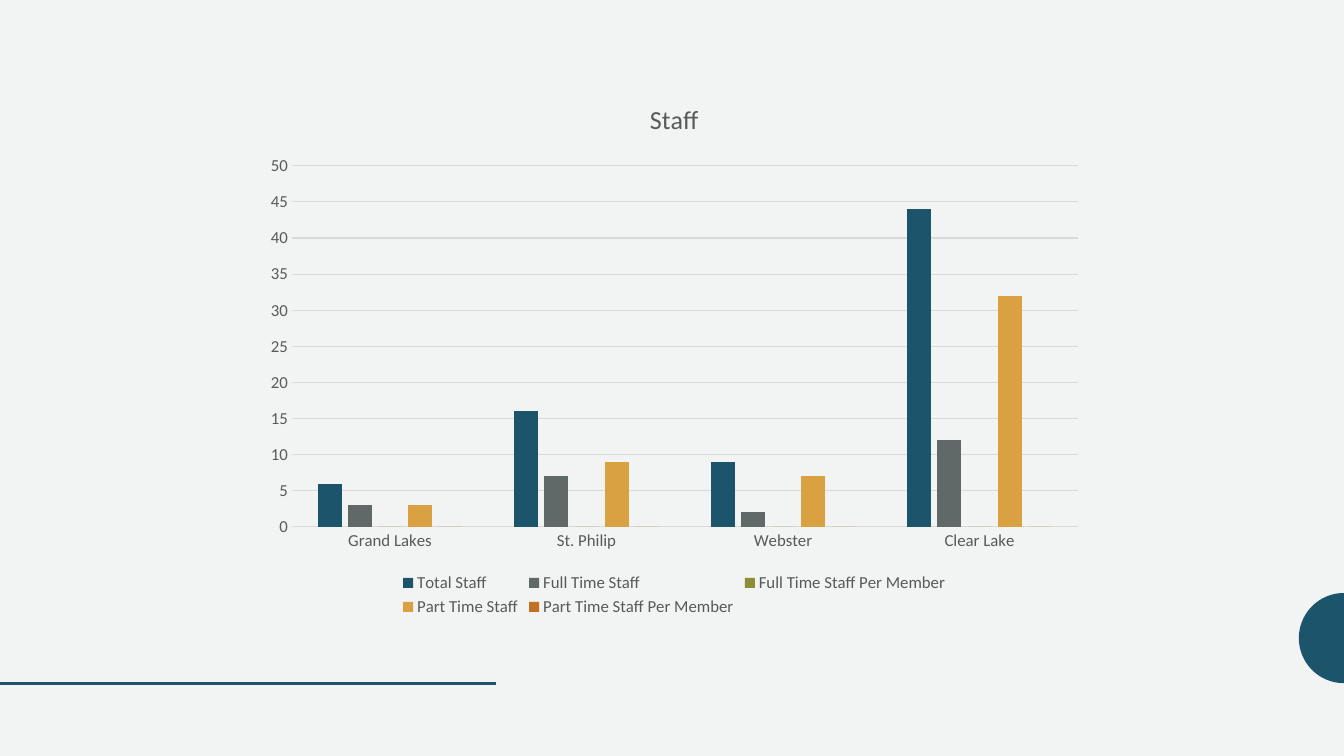
from math import cos, pi, sin

from lxml.etree import SubElement
from pptx import Presentation
from pptx.chart.data import CategoryChartData
from pptx.dml.color import RGBColor
from pptx.enum.chart import XL_CHART_TYPE, XL_LEGEND_POSITION, XL_TICK_MARK
from pptx.enum.shapes import MSO_CONNECTOR
from pptx.oxml.ns import qn
from pptx.util import Pt

BACKGROUND = RGBColor(0xF2, 0xF3, 0xF3)
TEAL = RGBColor(0x1C, 0x54, 0x6B)
GRAY = RGBColor(0x60, 0x69, 0x68)
OLIVE = RGBColor(0x8D, 0x8D, 0x35)
GOLD = RGBColor(0xD9, 0xA1, 0x42)
ORANGE = RGBColor(0xC4, 0x70, 0x23)
TEXT = RGBColor(0x59, 0x59, 0x59)
GRID = RGBColor(0xD9, 0xD9, 0xD9)


def format_font(font, size):
    font.name = "Calibri"
    font.size = Pt(size)
    font.bold = False
    font.color.rgb = TEXT


def format_line(line):
    line.color.rgb = GRID
    line.width = Pt(0.75)


presentation = Presentation()
presentation.slide_width = Pt(960)
presentation.slide_height = Pt(540)
slide = presentation.slides.add_slide(presentation.slide_layouts[6])
slide.background.fill.solid()
slide.background.fill.fore_color.rgb = BACKGROUND

center_x, center_y, radius, steps = 960, 455.8, 32.2, 48
arc_points = [
    (Pt(center_x - radius * sin(pi * step / steps)),
     Pt(center_y - radius * cos(pi * step / steps)))
    for step in range(steps + 1)
]
builder = slide.shapes.build_freeform(*arc_points[0], scale=1.0)
builder.add_line_segments(arc_points[1:], close=True)
half_circle = builder.convert_to_shape()
half_circle.shadow.inherit = False
half_circle.fill.solid()
half_circle.fill.fore_color.rgb = TEAL
half_circle.line.fill.background()

footer_line = slide.shapes.add_connector(
    MSO_CONNECTOR.STRAIGHT, Pt(0), Pt(488), Pt(354.3), Pt(488))
footer_line.line.color.rgb = TEAL
footer_line.line.width = Pt(2)
SubElement(footer_line._element.spPr, qn("a:effectLst"))

staff_series = [
    ("Total Staff", (6, 16, 9, 44), TEAL),
    ("Full Time Staff", (3, 7, 2, 12), GRAY),
    ("Full Time Staff Per Member", (0, 0, 0, 0), OLIVE),
    ("Part Time Staff", (3, 9, 7, 32), GOLD),
    ("Part Time Staff Per Member", (0, 0, 0, 0), ORANGE),
]
chart_data = CategoryChartData()
chart_data.categories = ["Grand Lakes", "St. Philip", "Webster", "Clear Lake"]
for name, values, color in staff_series:
    chart_data.add_series(name, values)

chart = slide.shapes.add_chart(
    XL_CHART_TYPE.COLUMN_CLUSTERED,
    Pt(181.4), Pt(57.6), Pt(600.5), Pt(385.9), chart_data).chart
format_font(chart.font, 12)

chart.has_title = True
title_run = chart.chart_title.text_frame.paragraphs[0].add_run()
title_run.text = "Staff"
format_font(title_run.font, 18.6)
chart.chart_title.include_in_layout = False

chart.has_legend = True
chart.legend.position = XL_LEGEND_POSITION.BOTTOM
chart.legend.include_in_layout = False
format_font(chart.legend.font, 12)

plot = chart.plots[0]
plot.gap_width = 219
plot.overlap = -27
plot.vary_by_categories = False
for series, (name, values, color) in zip(plot.series, staff_series):
    series.format.fill.solid()
    series.format.fill.fore_color.rgb = color

for axis in (chart.category_axis, chart.value_axis):
    axis.major_tick_mark = XL_TICK_MARK.NONE
    axis.minor_tick_mark = XL_TICK_MARK.NONE
    format_font(axis.tick_labels.font, 12)
format_line(chart.category_axis.format.line)
chart.value_axis.format.line.fill.background()
chart.value_axis.has_major_gridlines = True
format_line(chart.value_axis.major_gridlines.format.line)

presentation.save("out.pptx")
